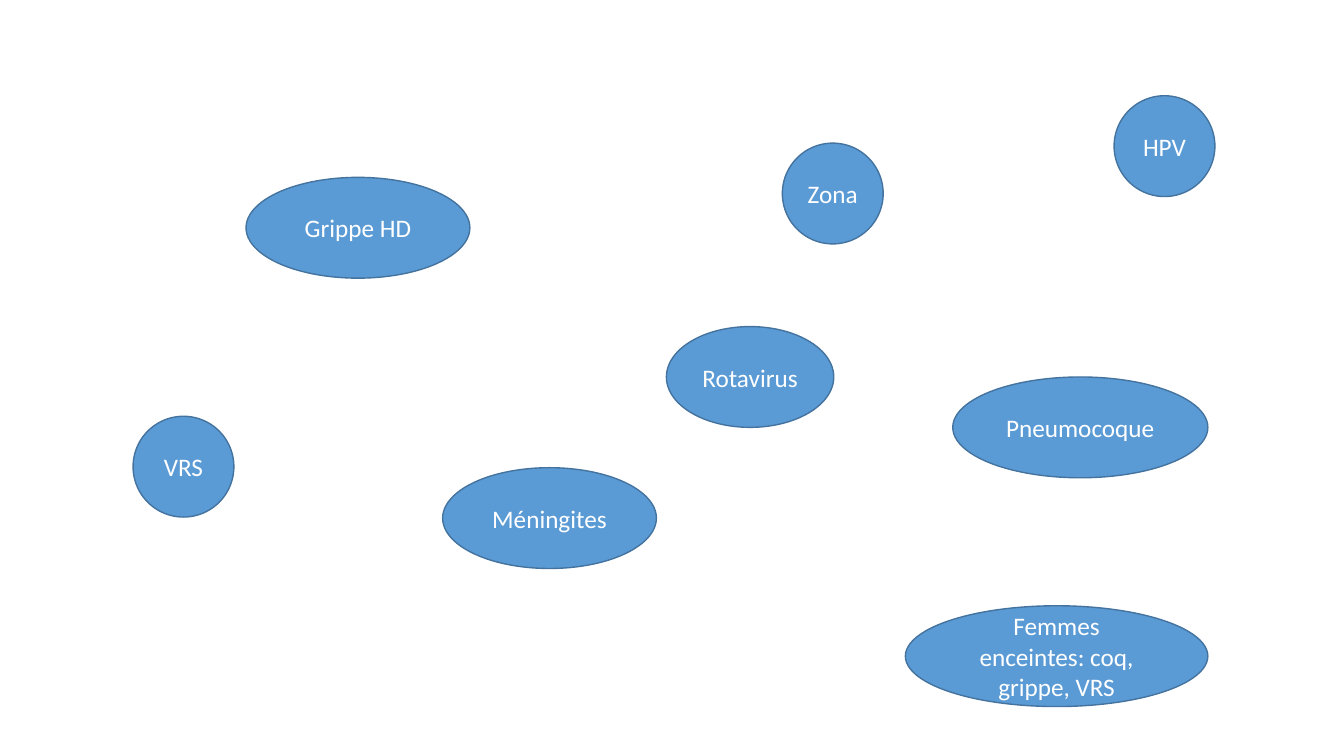
from pptx import Presentation
from pptx.dml.color import RGBColor
from pptx.enum.shapes import MSO_SHAPE
from pptx.enum.text import MSO_ANCHOR, PP_ALIGN
from pptx.util import Inches, Pt


def rgb(value):
    return RGBColor.from_string(value)


prs = Presentation()
prs.slide_width, prs.slide_height = Inches(13.33), Inches(7.5)
slide = prs.slides.add_slide(prs.slide_layouts[6])

# Shared formats
HEIGHT = 1
FONT = {"name": "Calibri", "size": Pt(18)}
FRAME = {"word_wrap": True, "vertical_anchor": MSO_ANCHOR.MIDDLE}

# Vaccine topics: label, left, top, width
topics = [
    ("Grippe HD", 2.44, 1.76, 2.22),
    ("Méningites", 4.39, 4.64, 2.12),
    ("Zona", 7.76, 1.42, 1),
    ("Pneumocoque", 9.45, 3.74, 2.53),
    ("HPV", 11.05, 0.95, 1),
    ("VRS", 1.32, 4.13, 1),
    ("Femmes enceintes: coq, grippe, VRS", 8.98, 6.01, 3),
    ("Rotavirus", 6.61, 3.24, 1.66),
]

# One ellipse per topic
for label, left, top, width in topics:
    sp = slide.shapes.add_shape(MSO_SHAPE.OVAL, Inches(left), Inches(top),
                                Inches(width), Inches(HEIGHT))
    sp.shadow.inherit = False
    sp.fill.solid()
    sp.fill.fore_color.rgb = rgb("5B9BD5")
    sp.line.color.rgb = rgb("43739E")
    sp.line.width = Pt(1)

    tf = sp.text_frame
    for key, value in FRAME.items():
        setattr(tf, key, value)
    p = tf.paragraphs[0]
    p.alignment = PP_ALIGN.CENTER
    r = p.add_run()
    r.text = label
    for key, value in FONT.items():
        setattr(r.font, key, value)
    r.font.color.rgb = rgb("FFFFFF")

prs.save("out.pptx")
